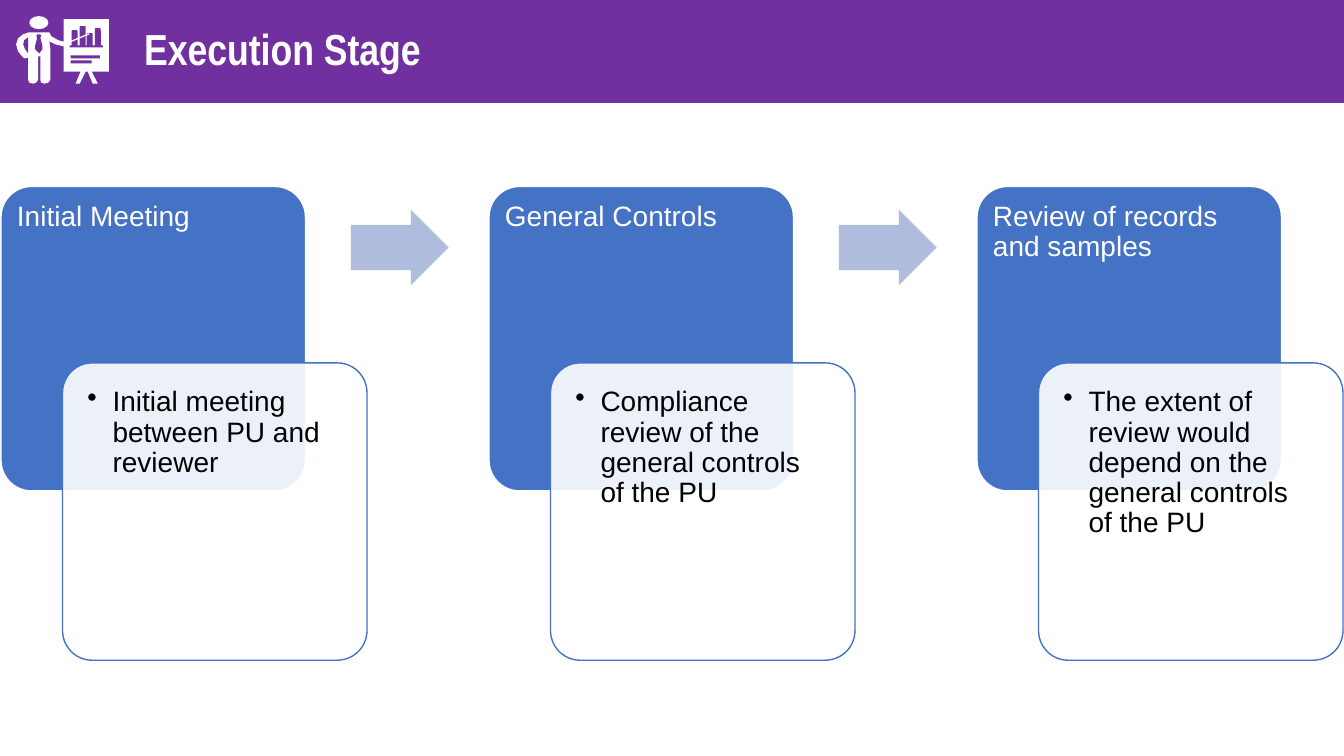
import dataclasses
import pptx
import pptx.dml.color
import pptx.enum.shapes
import pptx.enum.text
import pptx.oxml
import pptx.oxml.ns
import pptx.util

Inches = pptx.util.Inches
Pt = pptx.util.Pt
SHAPES = pptx.enum.shapes.MSO_SHAPE
ANCHORS = pptx.enum.text.MSO_ANCHOR


@dataclasses.dataclass(frozen=True)
class Theme:
    purple: str = "7030A0"
    blue: str = "4472C4"
    pale_blue: str = "B0BCDE"
    white: str = "FFFFFF"
    black: str = "000000"
    title_font: str = "Arial Narrow"
    body_font: str = "Arial"
    title_size: int = 31
    body_size: int = 20


class SlideBuilder:
    def __init__(self, slide, theme):
        self.slide = slide
        self.theme = theme

    def paint(self, shape, fill, line=None, line_width=1):
        shape.shadow.inherit = False
        shape.fill.solid()
        shape.fill.fore_color.rgb = pptx.dml.color.RGBColor.from_string(fill)
        if line:
            shape.line.color.rgb = pptx.dml.color.RGBColor.from_string(line)
            shape.line.width = Pt(line_width)
        else:
            shape.line.fill.background()
        return shape

    def box(self, kind, place, fill, line=None, line_width=1, adjustments=()):
        shape = self.slide.shapes.add_shape(kind, *map(Inches, place))
        for index, value in enumerate(adjustments):
            shape.adjustments[index] = value
        return self.paint(shape, fill, line, line_width)

    def outline(self, points, fill):
        corners = [(Inches(x), Inches(y)) for x, y in points]
        builder = self.slide.shapes.build_freeform(*corners[0])
        builder.add_line_segments(corners[1:], close=True)
        return self.paint(builder.convert_to_shape(), fill)

    def label(self, shape, text, color, size, font, insets, anchor=ANCHORS.TOP, bold=False):
        frame = shape.text_frame
        frame.word_wrap = True
        frame.vertical_anchor = anchor
        (frame.margin_left, frame.margin_top,
         frame.margin_right, frame.margin_bottom) = map(Inches, insets)
        frame.text = text
        para = frame.paragraphs[0]
        para.alignment = pptx.enum.text.PP_ALIGN.LEFT
        span = para.runs[0].font
        span.size, span.name, span.bold = Pt(size), font, bold
        span.color.rgb = pptx.dml.color.RGBColor.from_string(color)
        return para

    def banner(self, title):
        theme = self.theme
        bar = self.box(SHAPES.RECTANGLE, (-0.04, -0.08, 13.37, 1.11),
                       theme.purple, theme.white, 0.5)
        self.label(bar, title, theme.white, theme.title_size, theme.title_font,
                   (1.47, 0.05, 0.1, 0.05), ANCHORS.MIDDLE, True)

    def stage(self, left, heading):
        theme = self.theme
        box = self.box(SHAPES.ROUNDED_RECTANGLE, (left, 1.85, 3.02, 3.02),
                       theme.blue, theme.white, adjustments=[0.1])
        para = self.label(box, heading, theme.white, theme.body_size, theme.body_font, [0.07] * 4)
        para.line_spacing = 0.9

    def detail(self, left, text):
        theme = self.theme
        box = self.box(SHAPES.ROUNDED_RECTANGLE, (left, 3.6, 3.02, 2.95),
                       theme.white, theme.blue, adjustments=[0.1])
        # Let the stage show faintly through the card
        color = box.fill._xPr.find(".//" + pptx.oxml.ns.qn("a:srgbClr"))
        alpha = pptx.oxml.parse_xml(f'<a:alpha {pptx.oxml.ns.nsdecls("a")} val="90000"/>')
        color.append(alpha)
        para = self.label(box, text, theme.black, theme.body_size, theme.body_font, [0.16] * 4)
        para.line_spacing = 0.9
        # Hanging bullet
        properties = para._p.get_or_add_pPr()
        properties.set("marL", str(Inches(0.25)))
        properties.set("indent", str(-Inches(0.25)))
        properties.append(pptx.oxml.parse_xml(
            f'<a:buChar {pptx.oxml.ns.nsdecls("a")} char="•"/>'))

    def arrow(self, left):
        self.box(SHAPES.RIGHT_ARROW, (left, 2.08, 0.97, 0.75),
                 self.theme.pale_blue, adjustments=[0.6, 0.5])

    def presenter(self):
        white, purple = self.theme.white, self.theme.purple
        # Flip chart with its legs
        self.outline([(0.63, 0.19), (1.08, 0.19), (1.08, 0.71), (0.91, 0.71), (0.97, 0.83),
                      (0.92, 0.83), (0.87, 0.71), (0.85, 0.71), (0.79, 0.83), (0.75, 0.83),
                      (0.8, 0.71), (0.63, 0.71)], white)
        # Bars on the chart
        for left, top in ((0.71, 0.3), (0.79, 0.26), (0.86, 0.33), (0.94, 0.28)):
            self.box(SHAPES.ROUNDED_RECTANGLE, (left, top, 0.06, 0.46 - top), purple)
        # Axis and lines of text
        for left, top, width, height in ((0.69, 0.45, 0.33, 0.02), (0.7, 0.55, 0.29, 0.03),
                                         (0.7, 0.6, 0.21, 0.03)):
            self.box(SHAPES.RECTANGLE, (left, top, width, height), purple)
        # Body with both arms and legs
        self.outline([(0.29, 0.32), (0.46, 0.32), (0.49, 0.32), (0.51, 0.36), (0.58, 0.4),
                      (0.62, 0.41), (0.67, 0.41), (0.69, 0.43), (0.68, 0.46), (0.63, 0.46),
                      (0.55, 0.44), (0.49, 0.41), (0.5, 0.48), (0.5, 0.79), (0.48, 0.82),
                      (0.44, 0.83), (0.41, 0.82), (0.4, 0.79), (0.4, 0.56), (0.38, 0.56),
                      (0.38, 0.79), (0.36, 0.82), (0.33, 0.83), (0.29, 0.82), (0.28, 0.79),
                      (0.28, 0.57), (0.25, 0.58), (0.23, 0.57), (0.18, 0.51), (0.16, 0.44),
                      (0.18, 0.38), (0.23, 0.34)], white)
        # Gap under the bent arm
        self.outline([(0.28, 0.37), (0.24, 0.4), (0.23, 0.44), (0.25, 0.49), (0.28, 0.53)], purple)
        # Tie
        self.outline([(0.37, 0.34), (0.4, 0.34), (0.41, 0.36), (0.4, 0.37), (0.42, 0.45),
                      (0.42, 0.49), (0.39, 0.53), (0.35, 0.49), (0.35, 0.45), (0.37, 0.37),
                      (0.36, 0.36)], purple)
        # Head and pointer
        self.box(SHAPES.OVAL, (0.29, 0.16, 0.19, 0.13), white)
        self.outline([(0.69, 0.41), (0.88, 0.33), (0.89, 0.34), (0.7, 0.42)], white)


STAGES = [
    ("Initial Meeting", "Initial meeting between PU and reviewer"),
    ("General Controls", "Compliance review of the general controls of the PU"),
    ("Review of records and samples",
     "The extent of review would depend on the general controls of the PU"),
]
STAGE_PITCH = 4.84


def main():
    deck = pptx.Presentation()
    deck.slide_width, deck.slide_height = Inches(13.33), Inches(7.5)
    page = SlideBuilder(deck.slides.add_slide(deck.slide_layouts[6]), Theme())

    # Header
    page.banner("Execution Stage")
    page.presenter()

    # Process from left to right
    for index, (heading, text) in enumerate(STAGES):
        left = 0.01 + index * STAGE_PITCH
        page.stage(left, heading)
        page.detail(left + 0.61, text)
        if index < len(STAGES) - 1:
            page.arrow(left + 3.47)

    deck.save("out.pptx")


if __name__ == "__main__":
    main()
